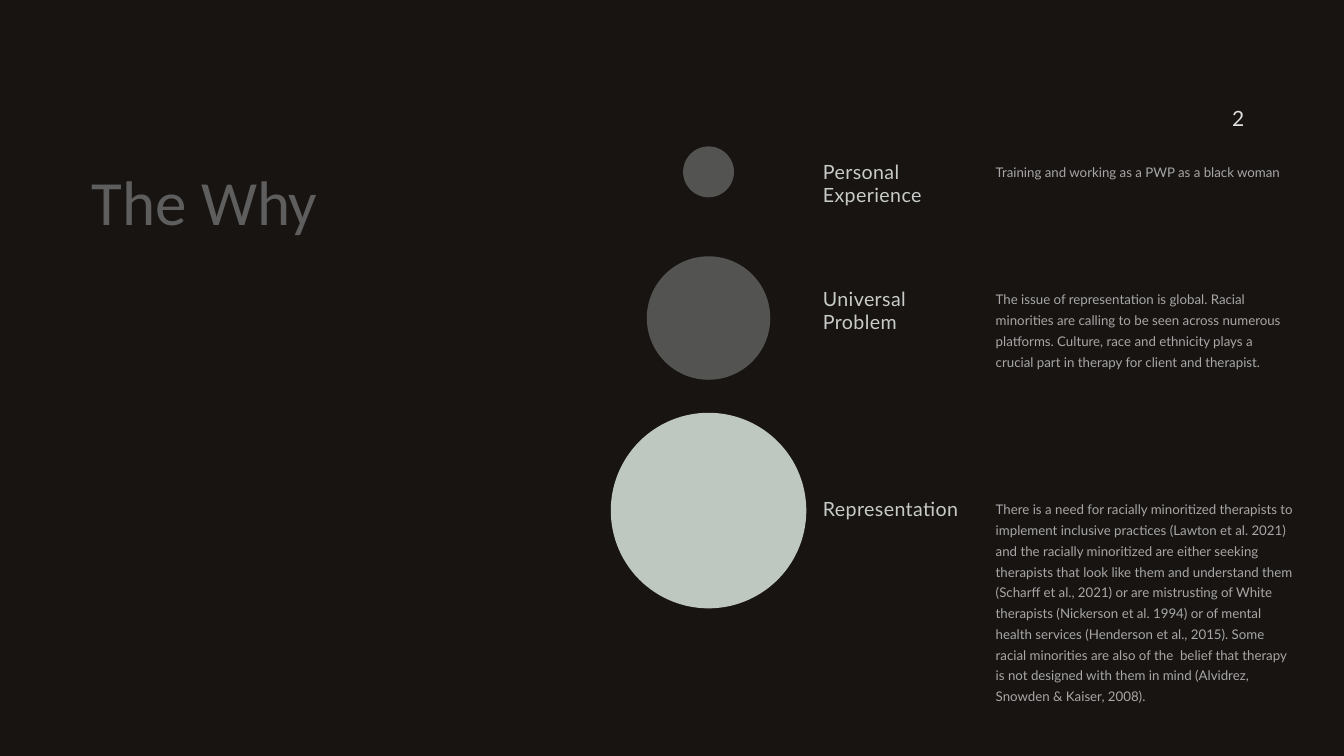
"""Build a slide of three growing circles, each with a topic and its reason."""
from lxml import etree
from pptx import Presentation
from pptx.dml.color import RGBColor
from pptx.enum.shapes import MSO_SHAPE
from pptx.enum.text import MSO_ANCHOR, MSO_AUTO_SIZE, PP_ALIGN
from pptx.oxml.ns import qn
from pptx.util import Inches, Pt

OVAL = MSO_SHAPE.OVAL
TOP = MSO_ANCHOR.TOP
LEFT = PP_ALIGN.LEFT
NO_FIT = MSO_AUTO_SIZE.NONE

DARK = RGBColor(0x18, 0x14, 0x12)
SAGE = RGBColor(0xBE, 0xC8, 0xC1)
PALE = RGBColor(0xC8, 0xCC, 0xC9)
GREY = RGBColor(0xA7, 0xA7, 0xA7)
DIM = RGBColor(0x5E, 0x5E, 0x5E)
LIGHT = RGBColor(0xDD, 0xDD, 0xDD)

CELL = Inches(1)
COLS, ROWS = 26.67, 15
AXIS, TOPIC, REASON = 14.06, 16.25, 19.68
INSET = 0.08

ITEMS = [
    (3.41, 1.01, 36, 3.09, 2.56, 1.25, "Personal\vExperience",
     "Training and working as a PWP as a black woman"),
    (6.31, 2.45, 36, 5.61, 2.56, 1.25, "Universal\nProblem",
     "The issue of representation is global. Racial minorities are calling "
     "to be seen across numerous platforms. Culture, race and ethnicity "
     "plays a crucial part in therapy for client and therapist."),
    (10.13, 3.88, 100, 9.78, 3.02, 4.46, "Representation",
     "There is a need for racially minoritized therapists to implement "
     "inclusive practices (Lawton et al. 2021) and the racially minoritized "
     "are either seeking therapists that look like them and understand them "
     "(Scharff et al., 2021) or are mistrusting of White therapists "
     "(Nickerson et al. 1994) or of mental health services (Henderson et "
     "al., 2015). Some racial minorities are also of the  belief that "
     "therapy is not designed with them in mind (Alvidrez, Snowden & "
     "Kaiser, 2008)."),
]


def grid(*spans):
    """Turn grid columns and rows into lengths."""
    return [round(span * CELL) for span in spans]


def write(shape, text, size, color, font="Lato", lead=1.0, track=0, wrap=True):
    """Fill a shape with formatted text."""
    frame = shape.text_frame
    frame.text = text
    frame.word_wrap = wrap
    frame.auto_size = NO_FIT
    frame.vertical_anchor = TOP
    frame.margin_left = frame.margin_right = round(INSET * CELL)
    frame.margin_top = frame.margin_bottom = round(INSET * CELL)
    for para in frame.paragraphs:
        para.alignment = LEFT
        para.line_spacing = lead
        for run in para.runs:
            run.font.name = font
            run.font.size = Pt(size)
            run.font.color.rgb = color
            if track:
                run.font._element.set("spc", str(track))


def label(slide, box, text, **style):
    """Add a text box on the grid."""
    write(slide.shapes.add_textbox(*grid(*box)), text, **style)


def disc(slide, mid, size, alpha):
    """Add a circle centred on the axis."""
    box = grid(AXIS - size / 2, mid - size / 2, size, size)
    shape = slide.shapes.add_shape(OVAL, *box)
    shape.shadow.inherit = False
    shape.fill.solid()
    shape.fill.fore_color.rgb = SAGE
    shape.line.fill.background()
    if alpha < 100:
        tint = shape._element.spPr.find(qn("a:solidFill"))[0]
        etree.SubElement(tint, qn("a:alpha")).set("val", str(alpha * 1000))


def head(slide, box, text, **style):
    """Place and format the title."""
    shape = slide.shapes.title
    shape.left, shape.top, shape.width, shape.height = grid(*box)
    write(shape, text, **style)


def main():
    """Build and save the slide."""
    deck = Presentation()
    deck.slide_width, deck.slide_height = grid(COLS, ROWS)
    slide = deck.slides.add_slide(deck.slide_layouts[5])
    slide.background.fill.solid()
    slide.background.fill.fore_color.rgb = DARK
    head(slide, (1.74, 3.14, 11.11, 1.67), "The Why",
         size=90, color=DIM, font="Calibri")
    for mid, size, alpha, top, wide, tall, topic, reason in ITEMS:
        disc(slide, mid, size, alpha)
        label(slide, (TOPIC, top, wide, 1.25), topic,
              size=28, color=PALE, track=60)
        label(slide, (REASON, top, 6.07, tall), reason,
              size=19, color=GREY, lead=1.3)
    label(slide, (24.37, 2.02, 0.4, 0.66), "2",
          size=30, color=LIGHT, wrap=False)
    deck.save("out.pptx")


if __name__ == "__main__":
    main()
